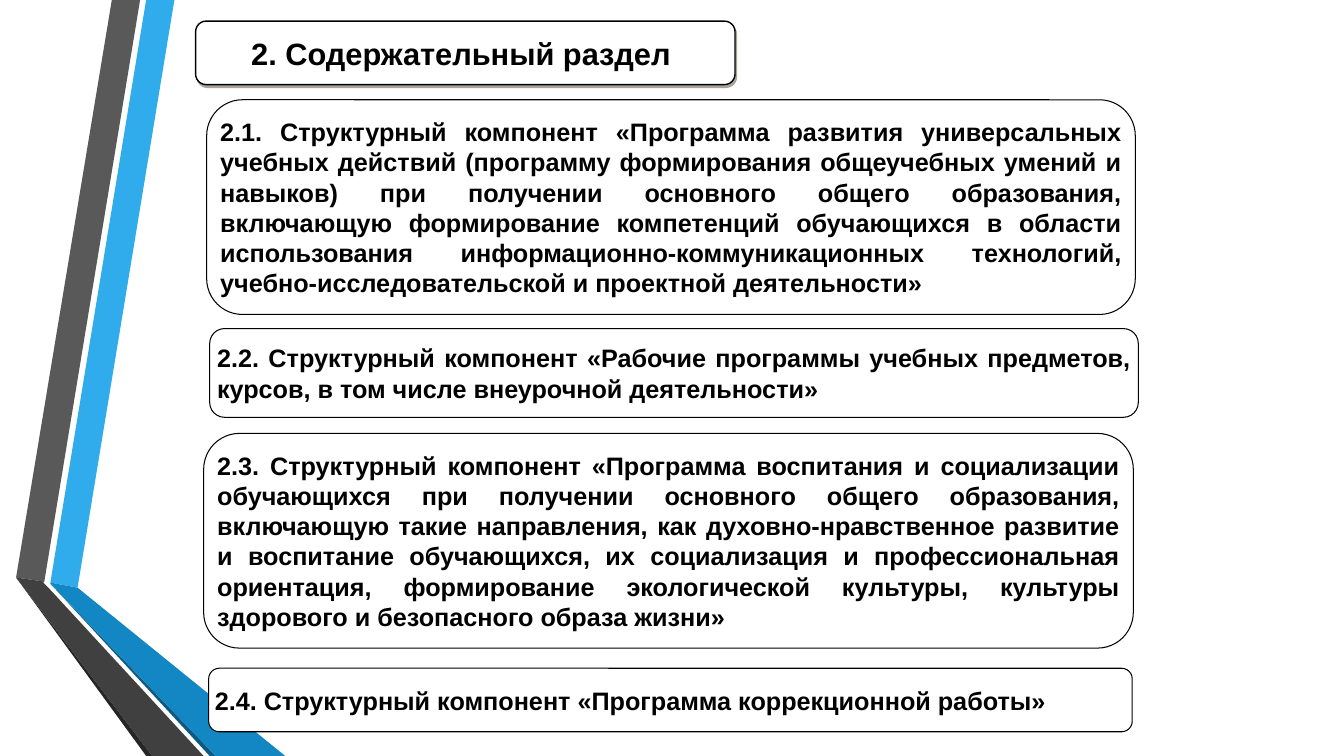
from lxml import etree
from pptx import Presentation
from pptx.dml.color import RGBColor
from pptx.enum.shapes import MSO_SHAPE
from pptx.enum.text import MSO_ANCHOR, PP_ALIGN
from pptx.oxml.ns import qn
from pptx.util import Inches, Pt

ROUNDED = MSO_SHAPE.ROUNDED_RECTANGLE
MIDDLE = MSO_ANCHOR.MIDDLE
CENTER, JUSTIFY = PP_ALIGN.CENTER, PP_ALIGN.JUSTIFY

TITLE = ("2. Содержательный раздел ", (1.94, 0.21, 5.35, 0.63))
SECTIONS = [
    ("2.1. Структурный компонент «Программа развития универсальных учебных действий "
     "(программу формирования общеучебных умений и навыков) при получении основного "
     "общего образования, включающую формирование компетенций обучающихся в области "
     "использования информационно-коммуникационных технологий, "
     "учебно-исследовательской и проектной деятельности»", (2.05, 0.99, 9.21, 2.13)),
    ("2.2. Структурный компонент «Рабочие программы учебных предметов, курсов, "
     "в том числе внеурочной деятельности»", (2.08, 3.26, 9.21, 0.88)),
    ("2.3. Структурный компонент «Программа воспитания и социализации обучающихся "
     "при получении основного общего образования, включающую такие направления, как "
     "духовно-нравственное развитие и воспитание обучающихся, их социализация и "
     "профессиональная ориентация, формирование экологической культуры, культуры "
     "здорового и безопасного образа жизни»", (2.02, 4.3, 9.22, 2.13)),
    ("2.4. Структурный компонент «Программа коррекционной работы»",
     (2.07, 6.63, 9.16, 0.63)),
]
RIBBONS = [
    ("blue", [(0.5, 5.78), (0.77, 5.83), (1.73, 0), (1.45, 0)]),
    ("gray", [(1.39, 0), (1.11, 0), (0.16, 5.73), (0.44, 5.77)]),
    ("black_edge", [(0.16, 5.73), (1.45, 7.5), (1.51, 7.5)]),
    ("navy_edge", [(0.5, 5.79), (2.08, 7.5), (2.14, 7.5)]),
    ("deep_blue", [(0.5, 5.79), (2.14, 7.5), (2.83, 7.5), (0.77, 5.83), (0.5, 5.78)]),
    ("dark_gray", [(2.02, 7.5), (0.48, 5.83), (0.43, 5.78), (0.44, 5.77),
                   (0.16, 5.73), (1.51, 7.5)]),
]
THEME = {
    "font": "Arial", "title_size": 22, "body_size": 18,
    "text": "000000", "line": "000000", "panel": "FFFFFF", "shadow": "524A37",
    "blue": "30ACEC", "gray": "595959", "black_edge": "262626",
    "navy_edge": "0C5A82", "deep_blue": "1287C3", "dark_gray": "404040",
}


def color(name):
    return RGBColor.from_string(THEME[name])


def add_ribbon(page, fill, points):
    corners = [(Inches(x), Inches(y)) for x, y in points]
    builder = page.shapes.build_freeform(*corners[0])
    builder.add_line_segments(corners[1:], close=True)
    ribbon = builder.convert_to_shape()
    ribbon.shadow.inherit = False
    ribbon.fill.solid()
    ribbon.fill.fore_color.rgb = color(fill)
    ribbon.line.fill.background()


def add_panel(page, text, bounds, size, align, line_width):
    panel = page.shapes.add_shape(ROUNDED, *map(Inches, bounds))
    panel.shadow.inherit = False
    panel.fill.solid()
    panel.fill.fore_color.rgb = color("panel")
    panel.line.color.rgb = color("line")
    panel.line.width = Pt(line_width)
    frame = panel.text_frame
    frame.word_wrap = True
    frame.vertical_anchor = MIDDLE
    frame.margin_left = frame.margin_right = Inches(0.03)
    frame.margin_top = frame.margin_bottom = Inches(0.03)
    frame.text = text
    para = frame.paragraphs[0]
    para.alignment = align
    font = para.runs[0].font
    font.name = THEME["font"]
    font.size = Pt(size)
    font.bold = True
    font.color.rgb = color("text")
    return panel


def add_shadow(panel):
    effects = panel.element.spPr.find(qn("a:effectLst"))
    shadow = etree.SubElement(effects, qn("a:outerShdw"), blurRad="0",
                              dist=str(Pt(2.2)), dir=str(63 * 60000),
                              algn="ctr", rotWithShape="0")
    tint = etree.SubElement(shadow, qn("a:srgbClr"), val=THEME["shadow"])
    etree.SubElement(tint, qn("a:alpha"), val="50000")


def main():
    deck = Presentation()
    deck.slide_width, deck.slide_height = Inches(13.33), Inches(7.5)
    page = deck.slides.add_slide(deck.slide_layouts[6])
    for fill, points in RIBBONS:
        add_ribbon(page, fill, points)
    add_shadow(add_panel(page, *TITLE, THEME["title_size"], CENTER, 1))
    for text, bounds in SECTIONS:
        add_panel(page, text, bounds, THEME["body_size"], JUSTIFY, 0.75)
    deck.save("out.pptx")


if __name__ == "__main__":
    main()
